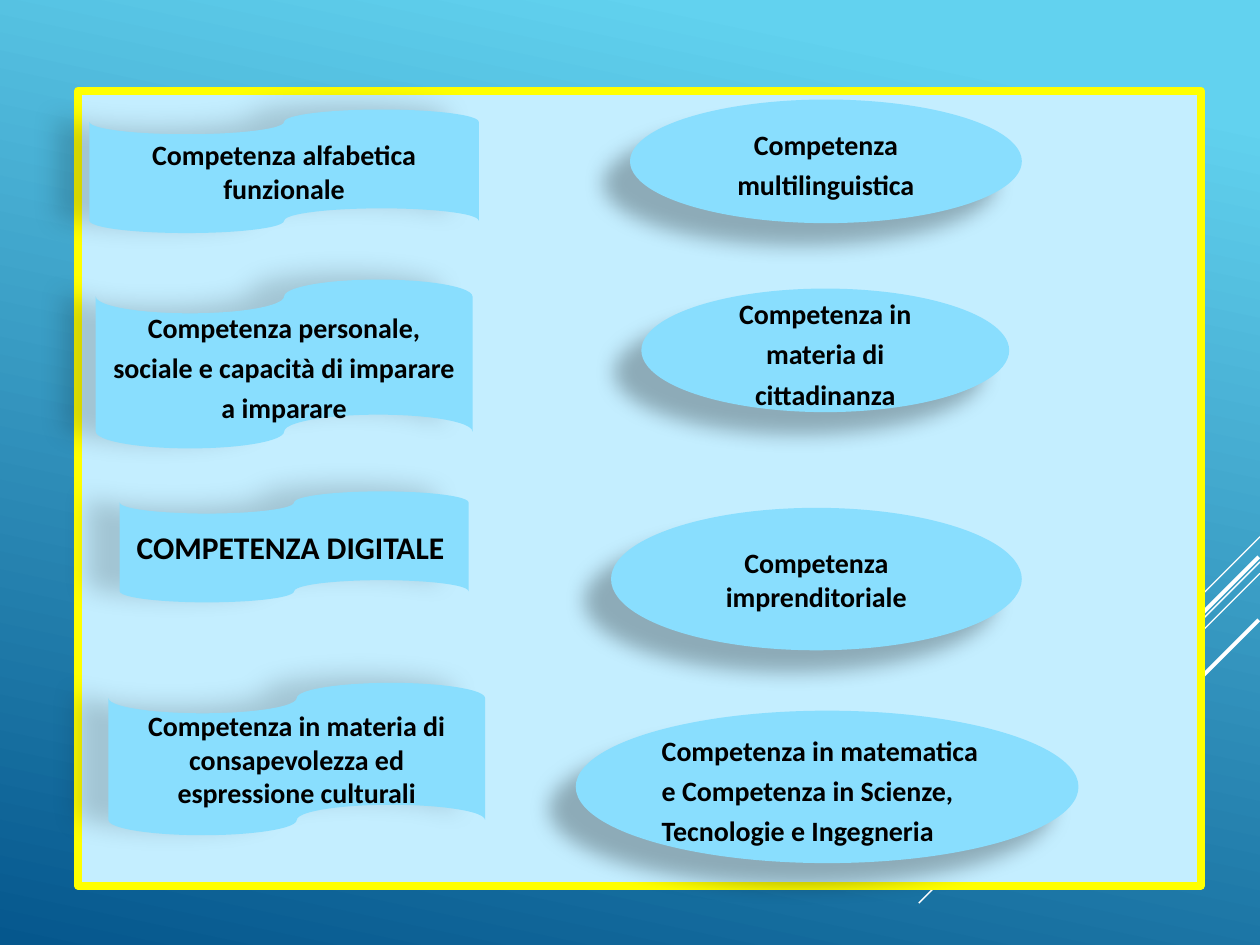
import dataclasses

import pptx
import pptx.dml.color
import pptx.enum.shapes
import pptx.enum.text
import pptx.oxml
import pptx.oxml.ns
import pptx.util

Pt = pptx.util.Pt
Shape = pptx.enum.shapes.MSO_SHAPE
Align = pptx.enum.text.PP_ALIGN


@dataclasses.dataclass(frozen=True)
class Shadow:
    opacity: float
    blur: float
    distance: float
    angle: int


@dataclasses.dataclass(frozen=True)
class Theme:
    sky: str = "62D2EF"
    deep: str = "05578D"
    panel: str = "C4EEFF"
    frame: str = "FFFF00"
    label: str = "89DEFE"
    text: str = "000000"
    stripe: str = "FFFFFF"
    font: str = "Calibri"
    body_size: int = 16
    heading_size: int = 18
    tape_shadow: Shadow = Shadow(17, 14.5, 19, 192)
    ellipse_shadow: Shadow = Shadow(27, 11.8, 19.7, 141)


def rgb(value):
    return pptx.dml.color.RGBColor.from_string(value)


class SlideBuilder:
    def __init__(self, slide, theme):
        self.slide = slide
        self.theme = theme

    def background(self):
        fill = self.slide.background.fill
        fill.gradient()
        fill.gradient_angle = 258
        stops = ((0.1, self.theme.sky), (1, self.theme.deep))
        for stop, (position, color) in zip(fill.gradient_stops, stops):
            stop.position = position
            stop.color.rgb = rgb(color)

    def stripe(self, right, top, reach, width):
        """Draw a 45-degree line running down and left from its top end."""
        connector = self.slide.shapes.add_connector(
            pptx.enum.shapes.MSO_CONNECTOR.STRAIGHT,
            Pt(right), Pt(top), Pt(right - reach), Pt(top + reach))
        connector.line.color.rgb = rgb(self.theme.stripe)
        connector.line.width = Pt(width)
        properties = connector._element.spPr
        properties.append(pptx.oxml.parse_xml(
            f"<a:effectLst {pptx.oxml.ns.nsdecls('a')}/>"))

    def shape(self, kind, box, fill):
        shape = self.slide.shapes.add_shape(kind, *map(Pt, box))
        shape.shadow.inherit = False
        shape.fill.solid()
        shape.fill.fore_color.rgb = rgb(fill)
        shape.line.fill.background()
        return shape

    def panel(self, box):
        panel = self.shape(Shape.RECTANGLE, box, self.theme.panel)
        panel.line.color.rgb = rgb(self.theme.frame)
        panel.line.width = Pt(4.5)

    def cast_shadow(self, shape, shadow):
        effects = shape._element.spPr.find(pptx.oxml.ns.qn("a:effectLst"))
        effects.append(pptx.oxml.parse_xml(
            f'<a:outerShdw {pptx.oxml.ns.nsdecls("a")} blurRad="{Pt(shadow.blur)}" '
            f'dist="{Pt(shadow.distance)}" dir="{shadow.angle * 60000}" rotWithShape="0">'
            f'<a:srgbClr val="{self.theme.text}"><a:alpha val="{shadow.opacity * 1000}"/>'
            '</a:srgbClr></a:outerShdw>'))

    def label(self, kind, shadow, box, text, airy=False, size=None, align=Align.CENTER):
        """Draw a captioned shape; airy captions have wider line spacing."""
        shape = self.shape(kind, box, self.theme.label)
        self.cast_shadow(shape, shadow)
        frame = shape.text_frame
        frame.word_wrap = True
        frame.vertical_anchor = pptx.enum.text.MSO_ANCHOR.MIDDLE
        paragraph = frame.paragraphs[0]
        paragraph.alignment = align
        if airy:
            paragraph.line_spacing = 1.2
            paragraph.space_after = Pt(4)
        run = paragraph.add_run()
        run.text = text
        run.font.name = self.theme.font
        run.font.size = Pt(size or self.theme.body_size)
        run.font.bold = True
        run.font.color.rgb = rgb(self.theme.text)

    def tape(self, box, text, **style):
        self.label(Shape.FLOWCHART_PUNCHED_TAPE, self.theme.tape_shadow, box, text, **style)

    def ellipse(self, box, text, **style):
        self.label(Shape.OVAL, self.theme.ellipse_shadow, box, text, **style)


def main():
    presentation = pptx.Presentation()
    presentation.slide_width, presentation.slide_height = Pt(720), Pt(540)
    slide = presentation.slides.add_slide(presentation.slide_layouts[6])
    theme = Theme()
    builder = SlideBuilder(slide, theme)

    builder.background()
    for stripe in (
        (720, 306.7, 60, 0.75),
        (720, 321.1, 195, 0.75),
        (720, 327.6, 124, 0.75),
        (719.3, 318.2, 113, 2.25),
        (719.3, 354.2, 82, 2.25),
    ):
        builder.stripe(*stripe)
    builder.panel((44.6, 51.8, 641.5, 454.3))

    builder.tape((51.1, 62.6, 222.5, 70.6), "Competenza alfabetica funzionale")
    builder.tape((68.4, 280.8, 199.4, 63.4), "COMPETENZA DIGITALE ",
                 size=theme.heading_size)
    builder.tape((54.7, 159.8, 215.3, 96.5),
                 "Competenza personale, sociale e capacità di imparare a imparare",
                 airy=True)
    builder.tape((61.9, 390.2, 215.3, 87.1),
                 "Competenza in materia di consapevolezza ed espressione culturali")

    builder.ellipse((360, 56.9, 223.9, 70.6), "Competenza multilinguistica", airy=True)
    builder.ellipse((329, 406.1, 287.3, 87.1),
                    "Competenza in matematica e Competenza in Scienze, "
                    "Tecnologie e Ingegneria",
                    airy=True, align=Align.LEFT)
    builder.ellipse((366.5, 164.9, 210.2, 70.6),
                    "Competenza in materia di cittadinanza", airy=True)
    builder.ellipse((349.2, 290.2, 234.7, 81.4), "Competenza imprenditoriale")

    presentation.save("out.pptx")


if __name__ == "__main__":
    main()
